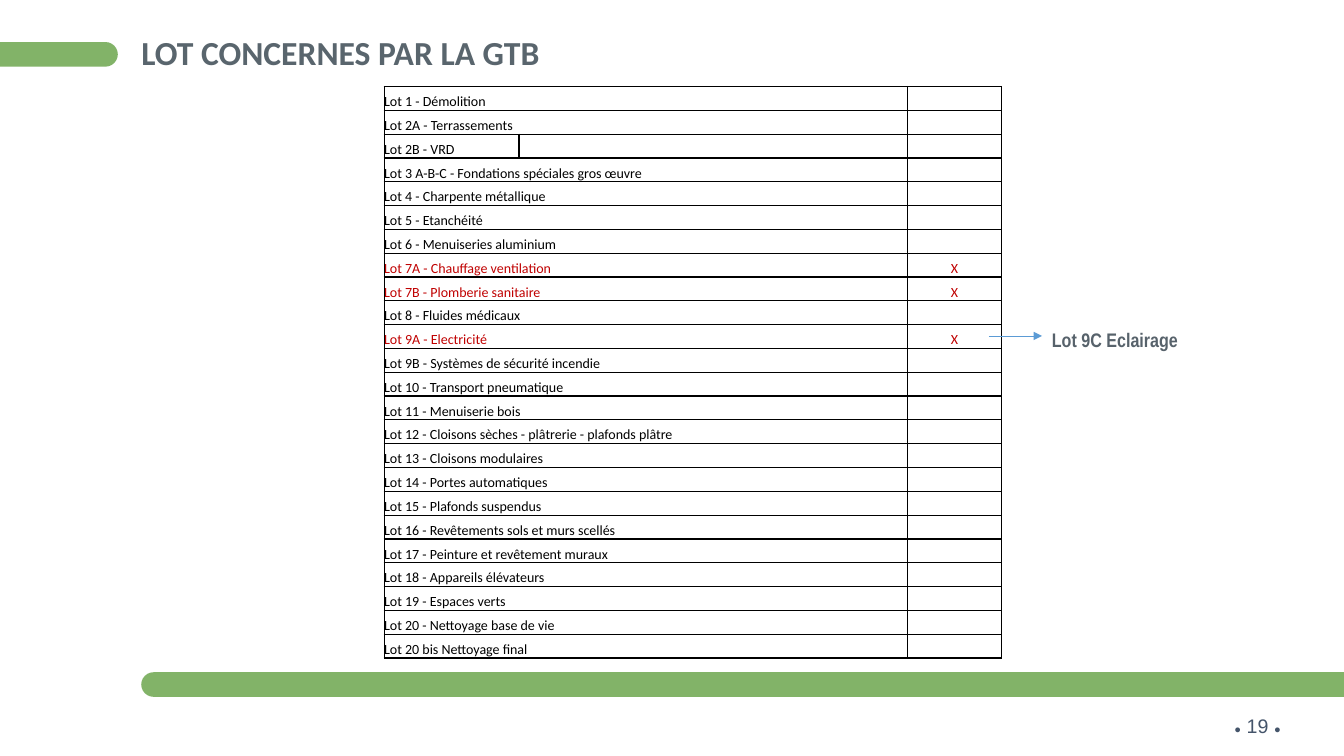
from lxml.etree import SubElement
from pptx import Presentation
from pptx.dml.color import RGBColor
from pptx.enum.shapes import MSO_CONNECTOR, MSO_SHAPE
from pptx.enum.text import MSO_ANCHOR as Anchor, MSO_AUTO_SIZE as AutoSize, PP_ALIGN as Align
from pptx.oxml.ns import qn
from pptx.util import Cm, Pt

COLORS = {
    "green": "63A143", "title": "59656D", "callout": "57626B", "number": "44546A",
    "arrow": "5B9BD5", "text": "000000", "concerned": "C00000",
}
LOTS = [
    "Lot 1 - Démolition",
    "Lot 2A - Terrassements",
    "Lot 2B - VRD",
    "Lot 3 A-B-C - Fondations spéciales gros œuvre",
    "Lot 4 - Charpente métallique",
    "Lot 5 - Etanchéité",
    "Lot 6 - Menuiseries aluminium",
    "Lot 7A - Chauffage ventilation",
    "Lot 7B - Plomberie sanitaire",
    "Lot 8 - Fluides médicaux",
    "Lot 9A - Electricité",
    "Lot 9B - Systèmes de sécurité incendie",
    "Lot 10 - Transport pneumatique",
    "Lot 11 - Menuiserie bois",
    "Lot 12 - Cloisons sèches - plâtrerie - plafonds plâtre",
    "Lot 13 - Cloisons modulaires",
    "Lot 14 - Portes automatiques",
    "Lot 15 - Plafonds suspendus",
    "Lot 16 - Revêtements sols et murs scellés",
    "Lot 17 - Peinture et revêtement muraux",
    "Lot 18 - Appareils élévateurs",
    "Lot 19 - Espaces verts",
    "Lot 20 - Nettoyage base de vie",
    "Lot 20 bis Nettoyage final",
]
CONCERNED = {"Lot 7A", "Lot 7B", "Lot 9A"}
SPLIT_LOT = "Lot 2B"


def rgb(name):
    return RGBColor.from_string(COLORS[name])


def write(paragraph, text, size=10, font="Calibri", color="text", bold=False,
          align=Align.LEFT, spacing=None):
    paragraph.alignment = align
    if spacing:
        paragraph.line_spacing = spacing
    run = paragraph.add_run()
    run.text = text
    run.font.size = Pt(size)
    run.font.name = font
    run.font.bold = bold
    run.font.color.rgb = rgb(color)


class SlideBuilder:
    def __init__(self, deck):
        self.slide = deck.slides.add_slide(deck.slide_layouts[5])
        self.shapes = self.slide.shapes

    def title(self, text, left, top, width, height):
        heading = self.shapes.title
        heading.left, heading.top = Cm(left), Cm(top)
        heading.width, heading.height = Cm(width), Cm(height)
        frame = heading.text_frame
        frame.margin_left = frame.margin_right = frame.margin_top = frame.margin_bottom = 0
        frame.vertical_anchor = Anchor.MIDDLE
        frame.word_wrap = True
        write(frame.paragraphs[0], text, size=24, color="title", bold=True, spacing=0.9)

    def bar(self, left, top, width, height):
        band = self.shapes.add_shape(MSO_SHAPE.ROUNDED_RECTANGLE,
                                     Cm(left), Cm(top), Cm(width), Cm(height))
        band.adjustments[0] = 0.5
        band.shadow.inherit = False
        band.line.fill.background()
        band.fill.solid()
        band.fill.fore_color.rgb = rgb("green")
        tint = band.fill._xPr.find(qn("a:solidFill"))[0]
        SubElement(tint, qn("a:alpha"), val="80000")

    def label(self, runs, left, top, width, height, wrap=True, **style):
        box = self.shapes.add_textbox(Cm(left), Cm(top), Cm(width), Cm(height))
        frame = box.text_frame
        frame.word_wrap = wrap
        frame.auto_size = AutoSize.SHAPE_TO_FIT_TEXT
        for text, size in runs:
            write(frame.paragraphs[0], text, size=size, **style)
        return box

    def cell(self, cell, text="", **style):
        cell.margin_left = cell.margin_right = cell.margin_top = cell.margin_bottom = 0
        cell.vertical_anchor = Anchor.BOTTOM
        paragraph = cell.text_frame.paragraphs[0]
        if text:
            write(paragraph, text, **style)
        else:
            SubElement(paragraph._p, qn("a:endParaRPr"), sz="1000")
        properties = cell._tc.get_or_add_tcPr()
        for side in ("lnL", "lnR", "lnT", "lnB"):
            border = SubElement(properties, qn(f"a:{side}"), w="12700")
            fill = SubElement(border, qn("a:solidFill"))
            SubElement(fill, qn("a:srgbClr"), val=COLORS["text"])
        cell.fill.background()

    def lot_table(self, left, top, widths, row_height):
        table = self.shapes.add_table(
            len(LOTS), len(widths), Cm(left), Cm(top),
            Cm(sum(widths)), Cm(row_height * len(LOTS))).table
        table.first_row = table.horz_banding = False
        for column, width in zip(table.columns, widths):
            column.width = Cm(width)
        for index, lot in enumerate(LOTS):
            table.rows[index].height = Cm(row_height)
            name, detail, mark = (table.cell(index, column) for column in range(3))
            concerned = any(lot.startswith(key) for key in CONCERNED)
            color = "concerned" if concerned else "text"
            self.cell(name, lot, color=color)
            self.cell(detail)
            self.cell(mark, "X" if concerned else "", color=color, align=Align.CENTER)
            if not lot.startswith(SPLIT_LOT):
                name.merge(detail)

    def arrow_to(self, target, start):
        middle = target.top + target.height // 2
        arrow = self.shapes.add_connector(MSO_CONNECTOR.STRAIGHT,
                                          Cm(start), middle, target.left, middle)
        arrow.end_connect(target, 1)
        arrow.line.color.rgb = rgb("arrow")
        arrow.line.width = Pt(0.5)
        SubElement(arrow.line._get_or_add_ln(), qn("a:tailEnd"), type="triangle")
        SubElement(arrow._element.spPr, qn("a:effectLst"))


def main():
    deck = Presentation()
    deck.slide_width, deck.slide_height = Cm(33.87), Cm(19.05)
    page = SlideBuilder(deck)
    page.label([("●", 8), (" 19 ", 14), ("●", 8)], 30.86, 17.86, 2.97, 0.86,
               font="Arial", color="number")
    page.bar(3.56, 16.94, 30.81, 0.62)
    page.bar(-0.33, 1.06, 3.3, 0.62)
    page.title("LOT CONCERNES PAR LA GTB", 3.56, 0.91, 28.24, 0.91)
    page.lot_table(9.68, 2.18, [3.4, 9.8, 2.35], 0.6)
    callout = page.label([("Lot 9C Eclairage", 14)], 26.26, 8.01, 3.73, 0.91, wrap=False,
                         font="Arial Narrow", color="callout", bold=True, spacing=1.2)
    page.arrow_to(callout, 24.92)
    deck.save("out.pptx")


if __name__ == "__main__":
    main()
